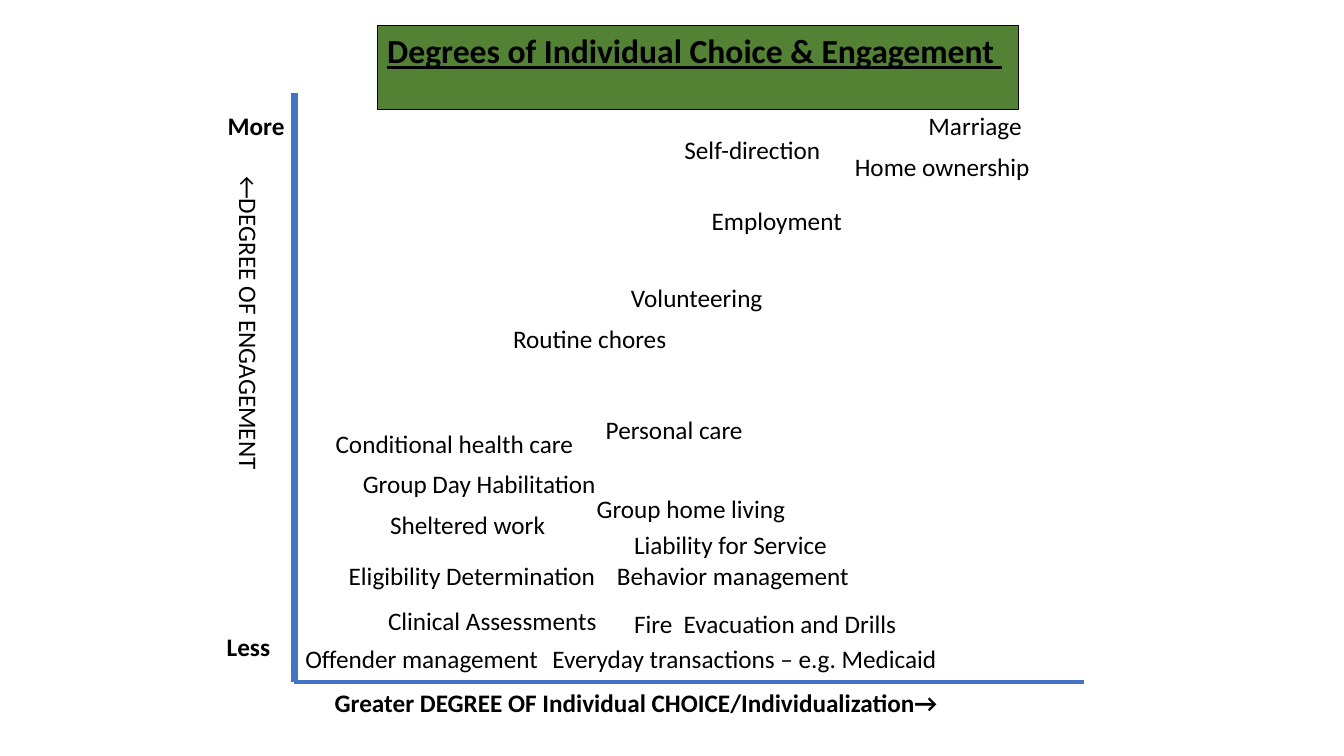
"""Build a slide that maps daily activities by individual choice and engagement."""
from dataclasses import dataclass

from lxml import etree
from pptx import Presentation
from pptx.dml.color import RGBColor
from pptx.enum.shapes import MSO_CONNECTOR
from pptx.enum.text import MSO_ANCHOR, MSO_AUTO_SIZE, PP_ALIGN
from pptx.oxml.ns import qn
from pptx.util import Emu, Pt

LINE = MSO_CONNECTOR.STRAIGHT
TOP = MSO_ANCHOR.TOP
LEFT = PP_ALIGN.LEFT
GROW = MSO_AUTO_SIZE.SHAPE_TO_FIT_TEXT
FONT = "Calibri"
BLACK, BLUE, GREEN = "000000", "4472C4", "548235"
ROW = 40


@dataclass
class Label:
    text: str
    x: int
    y: int
    w: int
    bold: bool = False
    wrap: bool = False
    turn: int = 0


@dataclass
class Axis:
    x: int
    y: int
    width: float


ORIGIN = (292, 677)
AXES = [Axis(292, 92, 4.5), Axis(1075, 677, 3)]
SCALES = [
    Label("Greater DEGREE OF Individual CHOICE/Individualization→", 322, 677, 748, True, True),
    Label("←DEGREE OF ENGAGEMENT", 40, 352, 414, wrap=True, turn=90),
    Label("More", 216, 105, 77, True, True),
    Label("Less", 215, 621, 63, True, True),
]
ITEMS = [
    Label("Marriage", 911, 105, 119),
    Label("Self-direction", 669, 128, 157),
    Label("Home ownership", 838, 145, 196),
    Label("Employment", 696, 199, 151),
    Label("Volunteering", 616, 275, 152),
    Label("Routine chores", 499, 316, 174),
    Label("Personal care", 591, 406, 157),
    Label("Conditional health care", 323, 420, 259),
    Label("Group Day Habilitation", 350, 460, 254),
    Label("Group home living", 582, 484, 210),
    Label("Sheltered work", 377, 500, 176),
    Label("Liability for Service", 619, 520, 214),
    Label("Eligibility Determination", 336, 551, 268),
    Label("Behavior management", 602, 551, 253),
    Label("Clinical Assessments", 375, 596, 229),
    Label("Fire  Evacuation and Drills", 619, 599, 286),
    Label("Offender management", 293, 633, 254),
    Label("Everyday transactions – e.g. Medicaid", 538, 633, 405),
]


def px(n: int) -> Emu:
    """Turn px into EMU at 100 px to the inch."""
    return Emu(n * 9144)


def paint(color, value: str) -> None:
    """Set a colour from a hex string."""
    color.rgb = RGBColor.from_string(value)


def write(shape, text: str, size: int, bold: bool, wrap: bool) -> None:
    """Put styled, left-set text in a shape."""
    frame = shape.text_frame
    frame.text = text
    frame.word_wrap = wrap
    frame.auto_size = GROW
    frame.vertical_anchor = TOP
    par = frame.paragraphs[0]
    par.alignment = LEFT
    font = par.runs[0].font
    font.name, font.size, font.bold = FONT, Pt(size), bold
    paint(font.color, BLACK)


def add_title(slide) -> None:
    """Place and format the title bar."""
    bar = slide.shapes.title
    bar.left, bar.top, bar.width, bar.height = map(px, (374, 25, 636, 50))
    write(bar, "Degrees of Individual Choice & Engagement ", 24, True, False)
    bar.text_frame.paragraphs[0].runs[0].font.underline = True
    bar.fill.solid()
    paint(bar.fill.fore_color, GREEN)
    paint(bar.line.color, BLACK)
    bar.line.width = Pt(0.75)


def add_axis(slide, axis: Axis) -> None:
    """Draw one axis from the origin."""
    line = slide.shapes.add_connector(LINE, *map(px, (*ORIGIN, axis.x, axis.y)))
    paint(line.line.color, BLUE)
    line.line.width = Pt(axis.width)
    etree.SubElement(line._element.spPr, qn("a:effectLst"))


def add_label(slide, label: Label) -> None:
    """Draw one text label."""
    box = slide.shapes.add_textbox(*map(px, (label.x, label.y, label.w, ROW)))
    box.rotation = label.turn
    write(box, label.text, 18, label.bold, label.wrap)


def main() -> None:
    """Build and save the slide."""
    deck = Presentation()
    deck.slide_width, deck.slide_height = px(1333), px(750)
    slide = deck.slides.add_slide(deck.slide_layouts[5])
    add_title(slide)
    for axis in AXES:
        add_axis(slide, axis)
    for label in SCALES + ITEMS:
        add_label(slide, label)
    deck.save("out.pptx")


if __name__ == "__main__":
    main()
